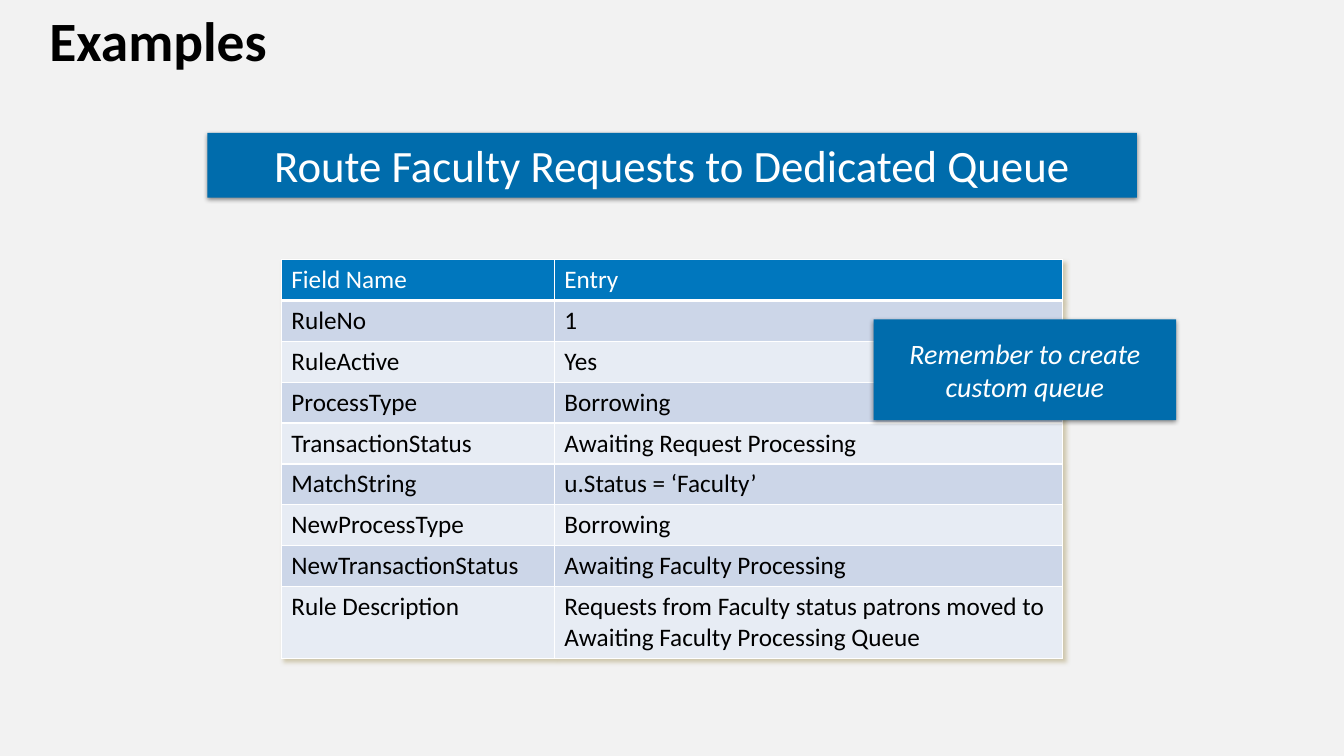
import dataclasses

import lxml.etree
import pptx
import pptx.dml.color
import pptx.enum.shapes
import pptx.enum.text
import pptx.oxml
import pptx.oxml.ns
import pptx.util

Cm = pptx.util.Cm
Pt = pptx.util.Pt
Align = pptx.enum.text.PP_ALIGN
Anchor = pptx.enum.text.MSO_ANCHOR
qn = pptx.oxml.ns.qn

ROWS = [
    ("Field Name", "Entry"),
    ("RuleNo", "1"),
    ("RuleActive", "Yes"),
    ("ProcessType", "Borrowing"),
    ("TransactionStatus", "Awaiting Request Processing"),
    ("MatchString", "u.Status = ‘Faculty’"),
    ("NewProcessType", "Borrowing"),
    ("NewTransactionStatus", "Awaiting Faculty Processing"),
    ("Rule Description", "Requests from Faculty status patrons moved to "
                         "Awaiting Faculty Processing Queue"),
]


@dataclasses.dataclass(frozen=True)
class Theme:
    """Hold the colours, font and type sizes of the slide."""
    font: str = "Calibri"
    page: str = "F2F2F2"
    ink: str = "000000"
    white: str = "FFFFFF"
    box: str = "006CAC"
    head: str = "0077BE"
    bands: tuple = ("E7ECF4", "CCD6E8")
    glow: str = "BFB48F"
    title: float = 39.6
    banner: float = 32
    note: float = 20
    body: float = 18


THEME = Theme()


def paint(fill, color):
    """Give a fill one solid colour."""
    fill.solid()
    fill.fore_color.rgb = pptx.dml.color.RGBColor.from_string(color)


def write(frame, text, size, color=THEME.ink, bold=False, italic=False,
          align=Align.LEFT, anchor=Anchor.TOP, line=None):
    """Put one formatted paragraph into a text frame."""
    frame.word_wrap = True
    frame.vertical_anchor = anchor
    para = frame.paragraphs[0]
    para.alignment = align
    if line:
        para.line_spacing = line
    run = para.add_run()
    run.text = text
    font = run.font
    font.name, font.size = THEME.font, Pt(size)
    font.bold, font.italic = bold, italic
    paint(font.fill, color)


def shade(color, alpha, blur, dist, angle):
    """Build an effect list with one outer shadow."""
    return pptx.oxml.parse_xml(
        f'<a:effectLst {pptx.oxml.ns.nsdecls("a")}>'
        f'<a:outerShdw blurRad="{Pt(blur)}" dist="{Pt(dist)}" '
        f'dir="{angle * 60000}" algn="tl" rotWithShape="0">'
        f'<a:srgbClr val="{color}"><a:alpha val="{alpha * 1000}"/></a:srgbClr>'
        '</a:outerShdw></a:effectLst>')


def add_box(slide, text, place, size, **style):
    """Add a blue box with a soft shadow and centred white text."""
    box = slide.shapes.add_shape(
        pptx.enum.shapes.MSO_SHAPE.RECTANGLE, *map(Cm, place))
    paint(box.fill, THEME.box)
    box.line.fill.background()
    box.shadow.inherit = False
    effect = box._element.spPr.find(qn("a:effectLst"))
    effect.getparent().replace(effect, shade(THEME.ink, 45, 3.5, 1.1, 90))
    write(box.text_frame, text, size, color=THEME.white,
          align=Align.CENTER, **style)


def edge(cell, **widths):
    """Draw white cell borders with the given widths."""
    props = cell._tc.get_or_add_tcPr()
    for spot, side in enumerate("LRTB"):
        line = lxml.etree.Element(
            qn("a:ln" + side), w=str(Pt(widths.get(side, 1))))
        fill = lxml.etree.SubElement(line, qn("a:solidFill"))
        lxml.etree.SubElement(fill, qn("a:srgbClr"), val=THEME.white)
        props.insert(spot, line)


def add_rules(slide):
    """Add the banded table of rule fields."""
    table = slide.shapes.add_table(
        len(ROWS), 2, Cm(7.09), Cm(6.54), Cm(19.68), Cm(10.03)).table
    table._tbl.tblPr.insert(0, shade(THEME.glow, 70, 3, 3, 45))
    for col, width in zip(table.columns, (6.88, 12.8)):
        col.width = Cm(width)
    for num, texts in enumerate(ROWS):
        last = num == len(ROWS) - 1
        table.rows[num].height = Cm(1.79 if last else 1.03)
        for col, text in enumerate(texts):
            cell = table.cell(num, col)
            paint(cell.fill, THEME.bands[num % 2] if num else THEME.head)
            edge(cell, T=3 if num == 1 else 1, B=1 if num else 3)
            write(cell.text_frame, text, THEME.body,
                  color=THEME.ink if num else THEME.white)


def add_title(slide, text):
    """Place and format the title."""
    title = slide.shapes.title
    title.left, title.top, title.width, title.height = map(
        Cm, (0.99, 0.38, 31.88, 1.42))
    write(title.text_frame, text, THEME.title, bold=True,
          anchor=Anchor.MIDDLE, line=0.9)


def main():
    """Build and save the slide."""
    deck = pptx.Presentation()
    deck.slide_width, deck.slide_height = Cm(33.87), Cm(19.05)
    slide = deck.slides.add_slide(deck.slide_layouts[5])
    paint(slide.background.fill, THEME.page)
    add_title(slide, "Examples")
    add_rules(slide)
    add_box(slide, "Route Faculty Requests to Dedicated Queue",
            (5.23, 3.35, 23.42, 1.63), THEME.banner)
    add_box(slide, "Remember to create custom queue",
            (22.02, 8.05, 7.62, 2.54), THEME.note,
            italic=True, anchor=Anchor.MIDDLE)
    deck.save("out.pptx")


if __name__ == "__main__":
    main()
